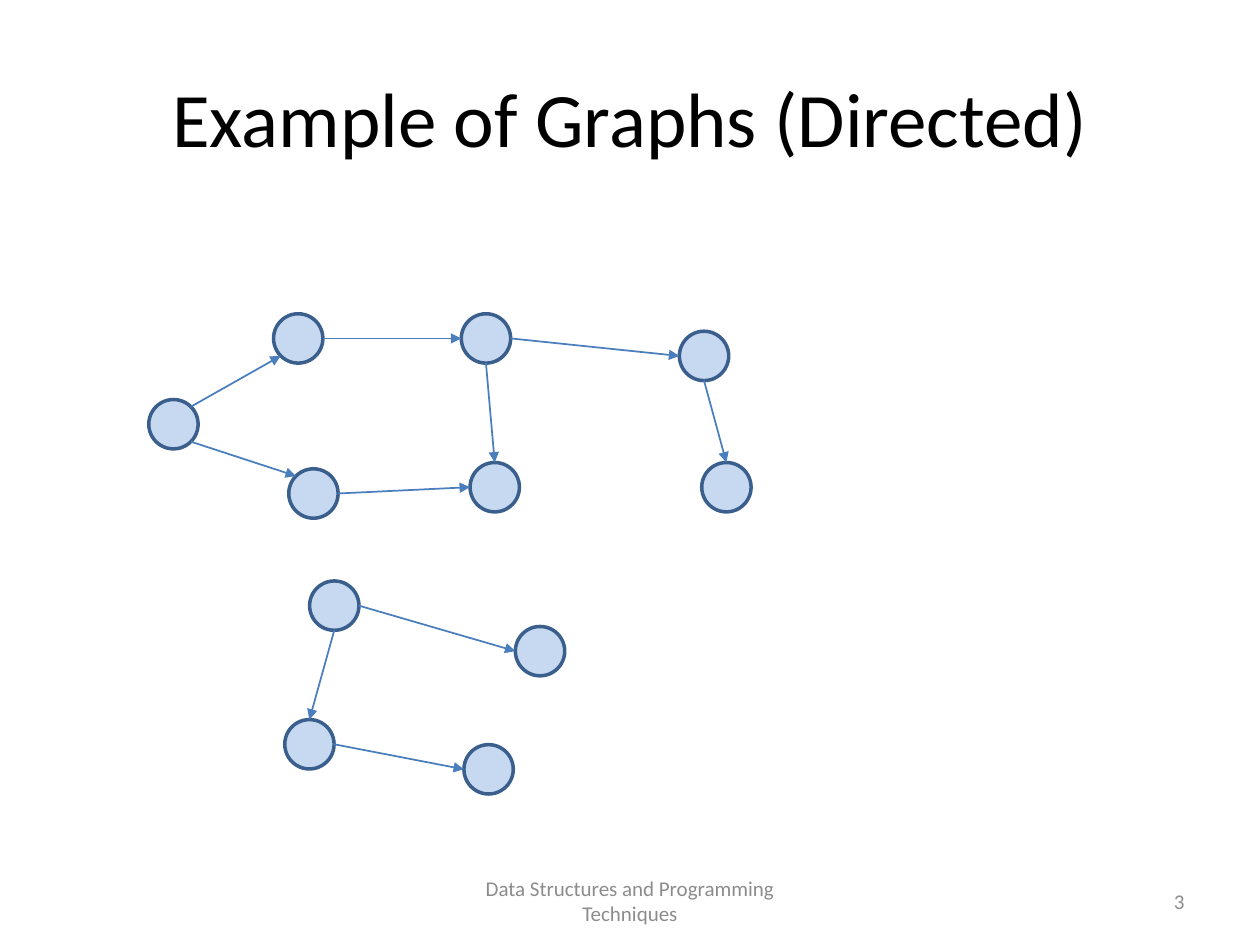
from math import cos, pi, sin

from lxml.etree import SubElement
from pptx import Presentation
from pptx.dml.color import RGBColor
from pptx.enum.shapes import MSO_CONNECTOR as Connector, MSO_SHAPE as Shape
from pptx.enum.text import MSO_ANCHOR as Anchor, PP_ALIGN as Align
from pptx.oxml.ns import qn
from pptx.util import Pt

NODE_SIZE = 28.2
# Connection sites of an ellipse, counter-clockwise from the top
TOP, TOP_LEFT, LEFT, BOTTOM_LEFT, BOTTOM, BOTTOM_RIGHT, RIGHT, TOP_RIGHT = range(8)

# Node offsets inside each graph's box, in points
UPPER_NODES = {
    "start": (0, 49),
    "upper left": (71.3, 0),
    "lower left": (80, 88.6),
    "upper middle": (178.6, 0),
    "lower middle": (183.6, 85),
    "upper right": (303.2, 10),
    "lower right": (316, 85),
}
UPPER_EDGES = [
    ("start", TOP_RIGHT, "upper left", BOTTOM_LEFT),
    ("start", BOTTOM_RIGHT, "lower left", TOP_LEFT),
    ("upper left", RIGHT, "upper middle", LEFT),
    ("lower left", RIGHT, "lower middle", LEFT),
    ("upper middle", BOTTOM, "lower middle", TOP),
    ("upper middle", RIGHT, "upper right", LEFT),
    ("upper right", BOTTOM, "lower right", TOP),
]
LOWER_NODES = {
    "root": (14.2, 0),
    "right": (131.8, 26),
    "bottom left": (0, 79.2),
    "bottom right": (102.4, 93.5),
}
LOWER_EDGES = [
    ("root", RIGHT, "right", LEFT),
    ("root", BOTTOM, "bottom left", TOP),
    ("bottom left", RIGHT, "bottom right", LEFT),
]


def color(value):
    return RGBColor.from_string(value)


def add_text(page, box, text, size, fill, align):
    frame = page.shapes.add_textbox(*map(Pt, box)).text_frame
    frame.word_wrap = True
    frame.vertical_anchor = Anchor.MIDDLE
    para = frame.paragraphs[0]
    para.text = text
    para.alignment = align
    para.font.name = "Calibri"
    para.font.size = Pt(size)
    para.font.color.rgb = color(fill)


def add_node(page, left, top):
    node = page.shapes.add_shape(
        Shape.OVAL, Pt(left), Pt(top), Pt(NODE_SIZE), Pt(NODE_SIZE))
    node.shadow.inherit = False
    node.fill.solid()
    node.fill.fore_color.rgb = color("C6D9F1")
    node.line.color.rgb = color("3A5F8C")
    node.line.width = Pt(2)
    return node


def site_point(node, site):
    angle = site * pi / 4
    radius = node.width / 2
    return (round(node.left + radius - radius * sin(angle)),
            round(node.top + radius - radius * cos(angle)))


def add_edge(page, source, source_site, target, target_site):
    edge = page.shapes.add_connector(
        Connector.STRAIGHT,
        *site_point(source, source_site), *site_point(target, target_site))
    edge.line.color.rgb = color("4B7EBC")
    edge.line.width = Pt(1)
    SubElement(edge.line._get_or_add_ln(), qn("a:tailEnd"), type="triangle")
    SubElement(edge._element.spPr, qn("a:effectLst"))
    # Ellipses have eight sites; begin_connect and end_connect know only four
    joints = edge._element.nvCxnSpPr.cNvCxnSpPr
    for tag, node, site in (("a:stCxn", source, source_site),
                            ("a:endCxn", target, target_site)):
        SubElement(joints, qn(tag), id=str(node.shape_id), idx=str(site))


def add_graph(page, left, top, offsets, edges):
    nodes = {name: add_node(page, left + x, top + y)
             for name, (x, y) in offsets.items()}
    for source, source_site, target, target_site in edges:
        add_edge(page, nodes[source], source_site, nodes[target], target_site)


def add_footer(page, top, height):
    add_text(page, (246, top, 228, height),
             "Data Structures and Programming Techniques",
             12, "8C8C8C", Align.CENTER)
    add_text(page, (516, top, 168, height), "3", 12, "8C8C8C", Align.RIGHT)


def main():
    deck = Presentation()
    deck.slide_width, deck.slide_height = Pt(720), Pt(540)
    page = deck.slides.add_slide(deck.slide_layouts[6])

    # Title
    add_text(page, (36, 21.6, 648, 90), "Example of Graphs (Directed)",
             44, "000000", Align.CENTER)
    # Two directed graphs
    add_graph(page, 85, 179.3, UPPER_NODES, UPPER_EDGES)
    add_graph(page, 162.7, 332, LOWER_NODES, LOWER_EDGES)
    # Footer and page number
    add_footer(page, 500.5, 28.75)

    deck.save("out.pptx")


if __name__ == "__main__":
    main()
